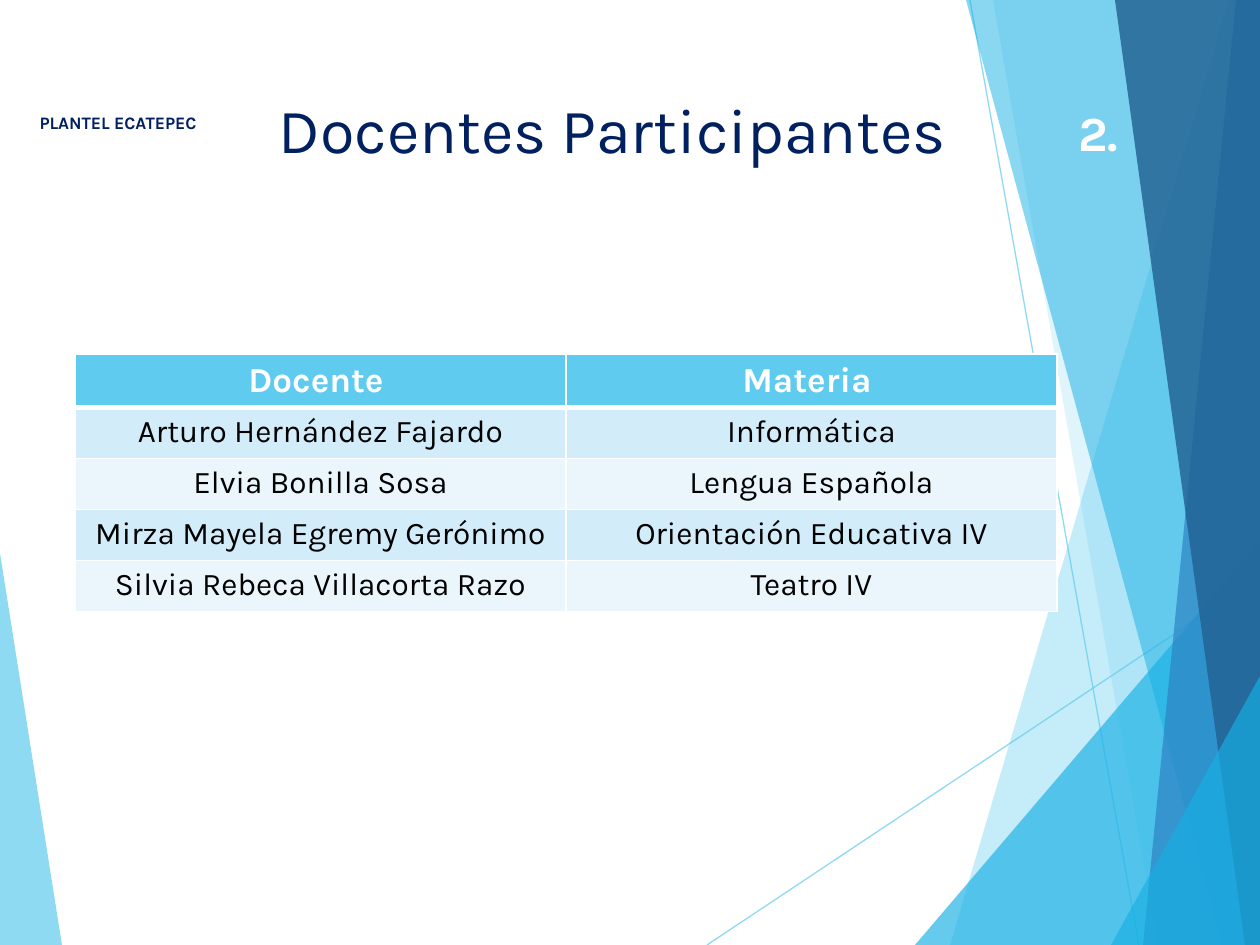
from lxml import etree
from pptx import Presentation
from pptx import util as u
from pptx.dml.color import RGBColor
from pptx.enum import shapes, text
from pptx.oxml.ns import qn

PX = 914400 / 126
WIDTH, HEIGHT = 1260, 945
FONT = "Karla"
COLORS = {
    "sky": "5FCBEF",
    "cyan": "17B0E4",
    "blue": "2E83C3",
    "deep": "226292",
    "navy": "002060",
    "white": "FFFFFF",
    "black": "000000",
    "odd": "D2ECF9",
    "even": "EAF6FC",
}
PANELS = [
    ("sky", 70, [(0, 553), (62, 945), (0, 945)]),
    ("sky", 36, [(1229, 0), (950, 945), (1260, 945), (1260, 0)]),
    ("sky", 20, [(993, 0), (1158, 945), (1260, 945), (1260, 0)]),
    ("cyan", 66, [(915, 945), (1260, 541), (1260, 945)]),
    ("cyan", 50, [(966, 0), (1222, 945), (1260, 945), (1260, 0)]),
    ("blue", 70, [(1236, 0), (1143, 945), (1260, 945), (1260, 0)]),
    ("deep", 82, [(1115, 0), (1245, 945), (1260, 945), (1260, 0)]),
    ("cyan", 66, [(1111, 945), (1260, 676), (1260, 945)]),
]
LINES = [(707, 945, 1260, 577), (970, 0, 1139, 945)]
ROWS = [
    ("Docente ", "Materia "),
    ("Arturo Hernández Fajardo", "Informática"),
    ("Elvia Bonilla Sosa", "Lengua Española"),
    ("Mirza Mayela Egremy Gerónimo", "Orientación Educativa IV"),
    ("Silvia Rebeca Villacorta Razo", "Teatro IV"),
]


def px(*nums):
    return [u.Emu(round(n * PX)) for n in nums]


def rgb(name):
    return RGBColor.from_string(COLORS[name])


def fade(shape, alpha):
    color = shape._element.spPr.find(".//" + qn("a:srgbClr"))
    etree.SubElement(color, qn("a:alpha"), val=str(alpha * 1000))


def add_panel(slide, color, alpha, points):
    path = slide.shapes.build_freeform(*points[0], scale=PX)
    path.add_line_segments(points[1:], close=True)
    panel = path.convert_to_shape()
    panel.shadow.inherit = False
    panel.fill.solid()
    panel.fill.fore_color.rgb = rgb(color)
    panel.line.fill.background()
    fade(panel, alpha)


def add_line(slide, ends):
    line = slide.shapes.add_connector(shapes.MSO_CONNECTOR.STRAIGHT, *px(*ends))
    line.line.color.rgb = rgb("sky")
    line.line.width = u.Pt(0.75)
    fade(line, 70)
    etree.SubElement(line._element.spPr, qn("a:effectLst"))


def set_text(frame, words, size, color, align, bold=False):
    frame.text = words
    para = frame.paragraphs[0]
    para.alignment = align
    font = para.font
    font.name, font.size, font.bold = FONT, u.Pt(size), bold
    font.color.rgb = rgb(color)


def set_title(slide, words, box):
    title = slide.shapes.title
    title.left, title.top, title.width, title.height = px(*box)
    frame = title.text_frame
    frame.vertical_anchor = text.MSO_ANCHOR.TOP
    frame.auto_size = text.MSO_AUTO_SIZE.NONE
    set_text(frame, words, 36, "navy", text.PP_ALIGN.RIGHT)


def add_label(slide, words, box, size, color, align):
    frame = slide.shapes.add_textbox(*px(*box)).text_frame
    frame.word_wrap = True
    set_text(frame, words, size, color, align, True)


def add_edges(cell, top, base):
    props = cell._tc.get_or_add_tcPr()
    for side, width in zip("LRTB", (1, 1, top, base)):
        edge = etree.SubElement(props, qn("a:ln" + side), w=str(u.Pt(width)))
        fill = etree.SubElement(edge, qn("a:solidFill"))
        etree.SubElement(fill, qn("a:srgbClr"), val=COLORS["white"])


def add_grid(slide, rows, box):
    table = slide.shapes.add_table(len(rows), len(rows[0]), *px(*box)).table
    for r, row in enumerate(rows):
        head = r == 0
        table.rows[r].height = px(52 if head else 51)[0]
        shade = "sky" if head else "odd" if r % 2 else "even"
        for c, words in enumerate(row):
            cell = table.cell(r, c)
            add_edges(cell, 3 if r == 1 else 1, 3 if head else 1)
            cell.fill.solid()
            cell.fill.fore_color.rgb = rgb(shade)
            set_text(cell.text_frame, words, 20 if head else 18,
                     "white" if head else "black", text.PP_ALIGN.CENTER, head)


def main():
    deck = Presentation()
    deck.slide_width, deck.slide_height = px(WIDTH, HEIGHT)
    slide = deck.slides.add_slide(deck.slide_layouts[5])
    add_panel(slide, *PANELS[0])
    for ends in LINES:
        add_line(slide, ends)
    for panel in PANELS[1:]:
        add_panel(slide, *panel)
    set_title(slide, "Docentes Participantes", (84, 84, 875, 181))
    add_grid(slide, ROWS, (75, 354, 982, 256))
    add_label(slide, "PLANTEL ECATEPEC", (13, 106, 210, 35), 10, "navy",
              text.PP_ALIGN.CENTER)
    add_label(slide, "2.", (1066, 96, 118, 72), 28, "white", text.PP_ALIGN.LEFT)
    deck.save("out.pptx")


if __name__ == "__main__":
    main()
